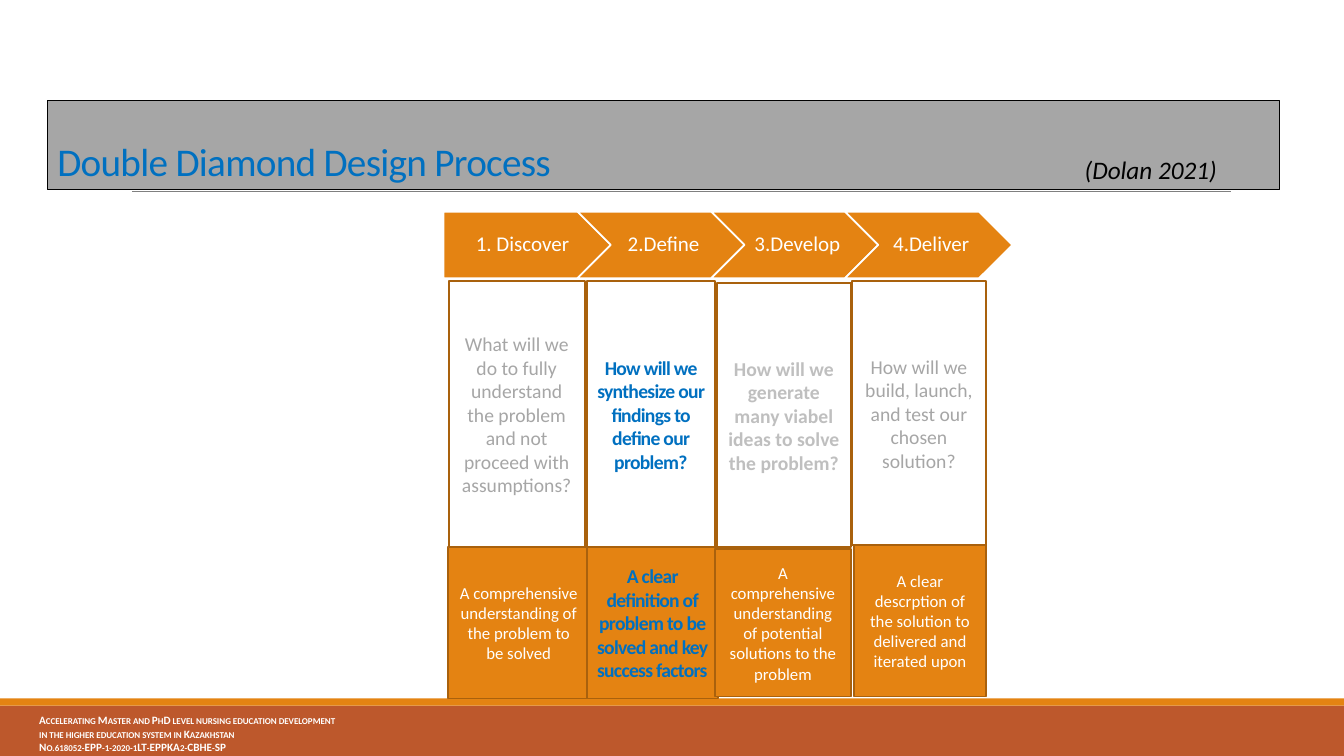
from dataclasses import dataclass

from pptx import Presentation
from pptx.dml.color import RGBColor
from pptx.enum.shapes import MSO_CONNECTOR, MSO_SHAPE
from pptx.enum.text import MSO_ANCHOR, PP_ALIGN
from pptx.oxml.ns import qn
from pptx.util import Inches, Pt

RECT, PENTAGON, CHEVRON = MSO_SHAPE.RECTANGLE, MSO_SHAPE.PENTAGON, MSO_SHAPE.CHEVRON
STRAIGHT = MSO_CONNECTOR.STRAIGHT
LEFT, CENTER = PP_ALIGN.LEFT, PP_ALIGN.CENTER
TOP, MIDDLE, BOTTOM = MSO_ANCHOR.TOP, MSO_ANCHOR.MIDDLE, MSO_ANCHOR.BOTTOM

Box = tuple[float, float, float, float]


@dataclass(frozen=True)
class Theme:
    font: str = "Calibri"
    white: str = "FFFFFF"
    black: str = "000000"
    blue: str = "0070C0"
    orange: str = "E48312"
    rust: str = "BD582C"
    brown: str = "A9610D"
    gray: str = "A6A6A6"
    light_gray: str = "BFBFBF"
    rule: str = "808080"
    title: float = 28
    source: float = 18
    step: float = 15
    question: float = 14
    outcome: float = 12
    footer: float = 8
    border: float = 1.25


T = Theme()


@dataclass(frozen=True)
class Style:
    size: float
    color: str
    bold: bool = False
    italic: bool = False
    tight: bool = False
    small_caps: bool = False
    align: PP_ALIGN = CENTER
    anchor: MSO_ANCHOR = MIDDLE
    spacing: float = 1.0


@dataclass(frozen=True)
class Cell:
    text: str
    box: Box
    style: Style


@dataclass(frozen=True)
class Step:
    label: str
    question: Cell
    outcome: Cell


FOCUS = Style(T.question, T.blue, bold=True, tight=True)
QUESTION = Style(T.question, T.gray)
FADED = Style(T.question, T.light_gray, bold=True)
OUTCOME = Style(T.outcome, T.white)
LABEL = Style(T.step, T.white, spacing=0.9)
TITLE = Style(T.title, T.blue, tight=True, align=LEFT, anchor=BOTTOM, spacing=0.85)
SOURCE = Style(T.source, T.black, italic=True, align=LEFT, anchor=TOP)
FOOTER = Style(T.footer, T.white, bold=True, small_caps=True, align=LEFT, anchor=TOP)

STEPS = [
    Step("1. Discover",
         Cell("What will we do to fully understand the problem and not proceed "
              "with assumptions?", (4.45, 2.79, 1.35, 2.64), QUESTION),
         Cell("A comprehensive understanding of the problem to be solved",
              (4.44, 5.43, 1.41, 1.5), OUTCOME)),
    Step("2.Define",
         Cell("How will we synthesize our findings to define our problem?\u00a0".strip(),
              (5.82, 2.79, 1.27, 2.64), FOCUS),
         Cell("A clear definition of problem to be solved and key success factors",
              (5.82, 5.43, 1.3, 1.5), FOCUS)),
    Step("3.Develop",
         Cell("How will we generate many viabel ideas to solve the problem?",
              (7.11, 2.81, 1.33, 2.62), FADED),
         Cell("A comprehensive understanding of potential solutions to the problem",
              (7.09, 5.45, 1.35, 1.46), OUTCOME)),
    Step("4.Deliver",
         Cell("How will we build, launch, and test our chosen solution?",
              (8.45, 2.79, 1.33, 2.62), QUESTION),
         Cell("A clear descrption of the solution to delivered and iterated upon",
              (8.47, 5.41, 1.31, 1.5), OUTCOME)),
]

FOOTER_LINES = [
    "Accelerating Master and PhD level nursing education development",
    "in the higher education system in Kazakhstan",
    "No.618052-EPP-1-2020-1LT-EPPKA2-CBHE-SP",
]

# Arrow row
ARROW_X, ARROW_Y, ARROW_W, ARROW_H = 4.4, 2.1, 1.66, 0.66
ARROW_PITCH = 1.327
NOTCH = ARROW_H / 2


def rgb(color: str) -> RGBColor:
    return RGBColor.from_string(color)


def write(s, lines: list[str], style: Style) -> None:
    tf = s.text_frame
    tf.word_wrap = True
    tf.vertical_anchor = style.anchor
    for i, line in enumerate(lines):
        p = tf.paragraphs[0] if i == 0 else tf.add_paragraph()
        p.text = line
        p.alignment = style.align
        p.line_spacing = style.spacing
        font = p.font
        font.name, font.size = T.font, Pt(style.size)
        font.bold, font.italic = style.bold, style.italic
        font.color.rgb = rgb(style.color)
        props = p._p.pPr.find(qn("a:defRPr"))
        if style.tight:
            props.set("spc", "-50")
        if style.small_caps:
            props.set("cap", "small")


def add_block(slide, kind: MSO_SHAPE, box: Box, fill: str,
              line: str | None = None, width: float = T.border):
    s = slide.shapes.add_shape(kind, *map(Inches, box))
    s.shadow.inherit = False
    s.fill.solid()
    s.fill.fore_color.rgb = rgb(fill)
    if line:
        s.line.color.rgb = rgb(line)
        s.line.width = Pt(width)
    else:
        s.line.fill.background()
    return s


def add_text(slide, box: Box, lines: list[str], style: Style):
    s = slide.shapes.add_textbox(*map(Inches, box))
    write(s, lines, style)
    return s


def add_arrow(slide, index: int, label: str) -> None:
    first = index == 0
    x = ARROW_X + index * ARROW_PITCH
    add_block(slide, PENTAGON if first else CHEVRON,
              (x, ARROW_Y, ARROW_W, ARROW_H), T.orange, T.white)
    label_x = x if first else x + NOTCH
    label_w = ARROW_W - NOTCH / 2 if first else ARROW_W - 2 * NOTCH
    tf = add_text(slide, (label_x, ARROW_Y, label_w, ARROW_H), [label], LABEL).text_frame
    tf.margin_left = Inches(0.09 if first else 0.07)
    tf.margin_right = Inches(0.02)
    tf.margin_top = tf.margin_bottom = Inches(0.04)


def add_cell(slide, cell: Cell, fill: str) -> None:
    write(add_block(slide, RECT, cell.box, fill, T.brown), [cell.text], cell.style)


def main() -> None:
    prs = Presentation()
    prs.slide_width, prs.slide_height = Inches(13.33), Inches(7.5)
    slide = prs.slides.add_slide(prs.slide_layouts[6])

    # Footer band
    add_block(slide, RECT, (0, 7, 13.33, 0.5), T.rust)
    add_block(slide, RECT, (0, 6.93, 13.33, 0.07), T.orange)
    add_text(slide, (0.29, 7.03, 4.59, 0.47), FOOTER_LINES, FOOTER)

    # Title bar and rule
    rule = slide.shapes.add_connector(STRAIGHT, Inches(1.31), Inches(1.9),
                                      Inches(12.21), Inches(1.9))
    rule.line.color.rgb = rgb(T.rule)
    rule.line.width = Pt(0.5)
    rule._element.spPr.add_effectLst() if hasattr(
        rule._element.spPr, "add_effectLst") else rule._element.spPr.get_or_add_effectLst()
    bar = add_block(slide, RECT, (0.47, 1, 12.22, 0.88), T.gray, T.black, 1)
    write(bar, ["Double Diamond Design Process"], TITLE)

    # Process steps: arrows, then outcomes, then questions on top
    for i, step in enumerate(STEPS):
        add_arrow(slide, i, step.label)
    for step in STEPS:
        add_cell(slide, step.outcome, T.orange)
    for step in STEPS:
        add_cell(slide, step.question, T.white)

    # Source
    add_text(slide, (10.66, 1.48, 2, 0.4), ["(Dolan 2021)"], SOURCE)

    prs.save("out.pptx")


if __name__ == "__main__":
    main()
